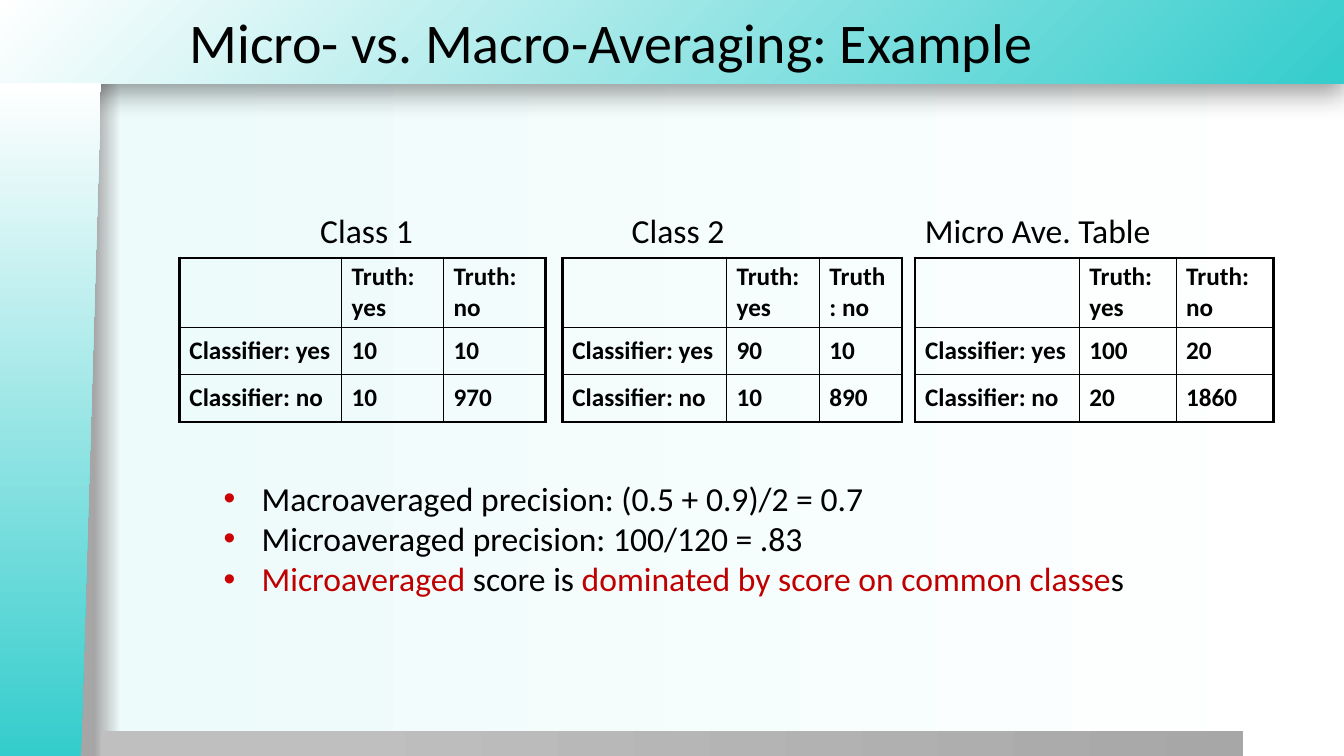
from dataclasses import dataclass

from pptx import Presentation
from pptx.dml.color import RGBColor
from pptx.enum.shapes import MSO_SHAPE
from pptx.enum.text import MSO_ANCHOR, MSO_AUTO_SIZE, PP_ALIGN
from pptx.oxml import parse_xml
from pptx.oxml.ns import nsdecls, qn
from pptx.util import Cm, Pt


@dataclass(frozen=True)
class Theme:
    font: str = "Calibri"
    title_size: int = 40
    text_size: int = 24
    cell_size: int = 18
    outer_rule: float = 2.25
    inner_rule: float = 1
    ink: str = "000000"
    emphasis: str = "C00000"
    bullet: str = "CC0000"
    accent: str = "34CCCC"
    paper: str = "FFFFFF"
    tint: str = "EDFBFB"
    edge: str = "A6A6A6"
    footer_light: str = "BFBFBF"
    footer_dark: str = "A7A7A7"


LINEAR = '<a:lin ang="0" scaled="0"/>'
FROM_BOTTOM_RIGHT = ('<a:path path="circle">'
                     '<a:fillToRect l="100000" t="100000"/></a:path>')


class SlideBuilder:
    def __init__(self, slide, theme):
        self.slide = slide
        self.theme = theme

    def gradient(self, fill, owner, stops, direction=LINEAR):
        """Fill the owner element with (percent, colour) stops."""
        fill.gradient()
        default = owner.find(".//" + qn("a:gradFill"))
        stop_xml = "".join(
            f'<a:gs pos="{percent * 1000}"><a:srgbClr val="{color}"/></a:gs>'
            for percent, color in stops)
        default.getparent().replace(default, parse_xml(
            f'<a:gradFill {nsdecls("a")} rotWithShape="1">'
            f'<a:gsLst>{stop_xml}</a:gsLst>{direction}</a:gradFill>'))

    def background(self, stops):
        self.gradient(self.slide.background.fill, self.slide._element, stops)

    def panel(self, kind, box, stops, direction=LINEAR):
        panel = self.slide.shapes.add_shape(kind, *map(Cm, box))
        panel.shadow.inherit = False
        panel.line.fill.background()
        self.gradient(panel.fill, panel._element, stops, direction)
        return panel

    def drop_shadow(self, panel):
        panel._element.spPr.find(qn("a:effectLst")).append(parse_xml(
            f'<a:outerShdw {nsdecls("a")} blurRad="{Pt(20)}" dist="{Pt(6)}" '
            f'dir="5400000" algn="t" rotWithShape="0">'
            f'<a:srgbClr val="{self.theme.ink}"><a:alpha val="40000"/>'
            f'</a:srgbClr></a:outerShdw>'))

    def style(self, run, size, color=None, bold=False):
        run.font.name = self.theme.font
        run.font.size = Pt(size)
        run.font.bold = bold
        run.font.color.rgb = RGBColor.from_string(color or self.theme.ink)

    def place(self, placeholder, box):
        """Move a placeholder to the box and in front of what is drawn so far."""
        self.slide.shapes._spTree.append(placeholder._element)
        (placeholder.left, placeholder.top,
         placeholder.width, placeholder.height) = map(Cm, box)
        placeholder.text_frame.auto_size = MSO_AUTO_SIZE.NONE
        return placeholder.text_frame

    def title(self, wording, box):
        frame = self.place(self.slide.shapes.title, box)
        frame.text = wording
        frame.vertical_anchor = MSO_ANCHOR.MIDDLE
        heading = frame.paragraphs[0]
        heading.alignment = PP_ALIGN.LEFT
        self.style(heading.runs[0], self.theme.title_size)

    def label(self, wording, box):
        label = self.slide.shapes.add_textbox(*map(Cm, box))
        label.text_frame.word_wrap = True
        label.text_frame.text = wording
        self.style(label.text_frame.paragraphs[0].runs[0], self.theme.text_size)

    def bullets(self, points, box):
        """Fill the body; each point is a list of (wording, colour) parts."""
        frame = self.place(self.slide.placeholders[1], box)
        frame.vertical_anchor = MSO_ANCHOR.TOP
        for index, parts in enumerate(points):
            point = frame.add_paragraph() if index else frame.paragraphs[0]
            point.level = 1
            point.space_before = Pt(0)
            for wording, color in parts:
                run = point.add_run()
                run.text = wording
                self.style(run, self.theme.text_size, color)
            properties = point._p.get_or_add_pPr()
            properties.set("marL", str(Cm(0.96)))
            properties.set("indent", str(-Cm(0.96)))
            for mark in (
                    f'<a:buClr {nsdecls("a")}>'
                    f'<a:srgbClr val="{self.theme.bullet}"/></a:buClr>',
                    f'<a:buFont {nsdecls("a")} typeface="Arial"/>',
                    f'<a:buChar {nsdecls("a")} char="•"/>'):
                properties.append(parse_xml(mark))

    def borders(self, cell, outer):
        """Rule all four sides; outer names those on the table's rim."""
        properties = cell._tc.get_or_add_tcPr()
        for index, side in enumerate("LRTB"):
            width = self.theme.outer_rule if side in outer else self.theme.inner_rule
            properties.insert(index, parse_xml(
                f'<a:ln{side} {nsdecls("a")} w="{Pt(width)}"><a:solidFill>'
                f'<a:srgbClr val="{self.theme.ink}"/></a:solidFill></a:ln{side}>'))

    def table(self, rows, left, top, widths, heights):
        table = self.slide.shapes.add_table(
            len(rows), len(widths), Cm(left), Cm(top),
            Cm(sum(widths)), Cm(sum(heights))).table
        table.first_row = table.horz_banding = False
        for column, width in zip(table.columns, widths):
            column.width = Cm(width)
        last_row, last_column = len(rows) - 1, len(widths) - 1
        for r, (row, height) in enumerate(zip(rows, heights)):
            table.rows[r].height = Cm(height)
            for c, wording in enumerate(row):
                cell = table.cell(r, c)
                cell.fill.background()
                cell.vertical_anchor = MSO_ANCHOR.MIDDLE
                cell.margin_top = cell.margin_bottom = Cm(0.1)
                cell.text = wording
                for run in cell.text_frame.paragraphs[0].runs:
                    self.style(run, self.theme.cell_size, bold=True)
                rim = {"L": c == 0, "R": c == last_column,
                       "T": r == 0, "B": r == last_row}
                self.borders(cell, [side for side in rim if rim[side]])


def main():
    deck = Presentation()
    deck.slide_width, deck.slide_height = Cm(33.87), Cm(19.05)
    theme = Theme()
    builder = SlideBuilder(deck.slides.add_slide(deck.slide_layouts[1]), theme)

    builder.background([(7, theme.edge), (9, theme.tint), (100, theme.paper)])
    fade = [(0, theme.accent), (100, theme.paper)]
    header = builder.panel(MSO_SHAPE.RECTANGLE, (-0.02, 0, 33.89, 2.11),
                           fade, FROM_BOTTOM_RIGHT)
    builder.drop_shadow(header)
    builder.panel(MSO_SHAPE.RECTANGLE, (2.54, 18.42, 28.78, 0.66),
                  [(20, theme.footer_light), (100, theme.footer_dark)])
    sidebar = builder.panel(MSO_SHAPE.FLOWCHART_MANUAL_INPUT,
                            (-7.21, 9.32, 16.97, 2.54), fade)
    sidebar.rotation = 270
    sidebar._element.spPr.find(qn("a:xfrm")).set("flipV", "1")

    builder.title("Micro- vs. Macro-Averaging: Example", (4.52, 0, 23.65, 2.06))

    # Counts are (classifier yes, classifier no), each as (truth yes, truth no).
    confusions = [
        (4.52, (4.09, 2.57, 2.57), (("10", "10"), ("10", "970"))),
        (14.17, (4.14, 2.34, 2.08), (("90", "10"), ("10", "890"))),
        (23.06, (4.14, 2.44, 2.46), (("100", "20"), ("20", "1860"))),
    ]
    for left, widths, (said_yes, said_no) in confusions:
        builder.table([("", "Truth: yes", "Truth: no"),
                       ("Classifier: yes", *said_yes),
                       ("Classifier: no", *said_no)],
                      left, 6.5, widths, (1.73, 1.19, 1.19))

    for caption, left, width in [("Class 1", 7.82, 5.08),
                                 ("Class 2", 15.67, 5.08),
                                 ("Micro Ave. Table", 23.06, 7.42)]:
        builder.label(caption, (left, 5.16, width, 1.27))

    builder.bullets([
        [("Macroaveraged precision: (0.5 + 0.9)/2 = 0.7", theme.ink)],
        [("Microaveraged precision: 100/120 = .83", theme.ink)],
        [("Microaveraged", theme.emphasis), (" score is ", theme.ink),
         ("dominated by score on common classe", theme.emphasis),
         ("s", theme.ink)],
    ], (5.38, 11.91, 23.5, 4.65))

    deck.save("out.pptx")


if __name__ == "__main__":
    main()
